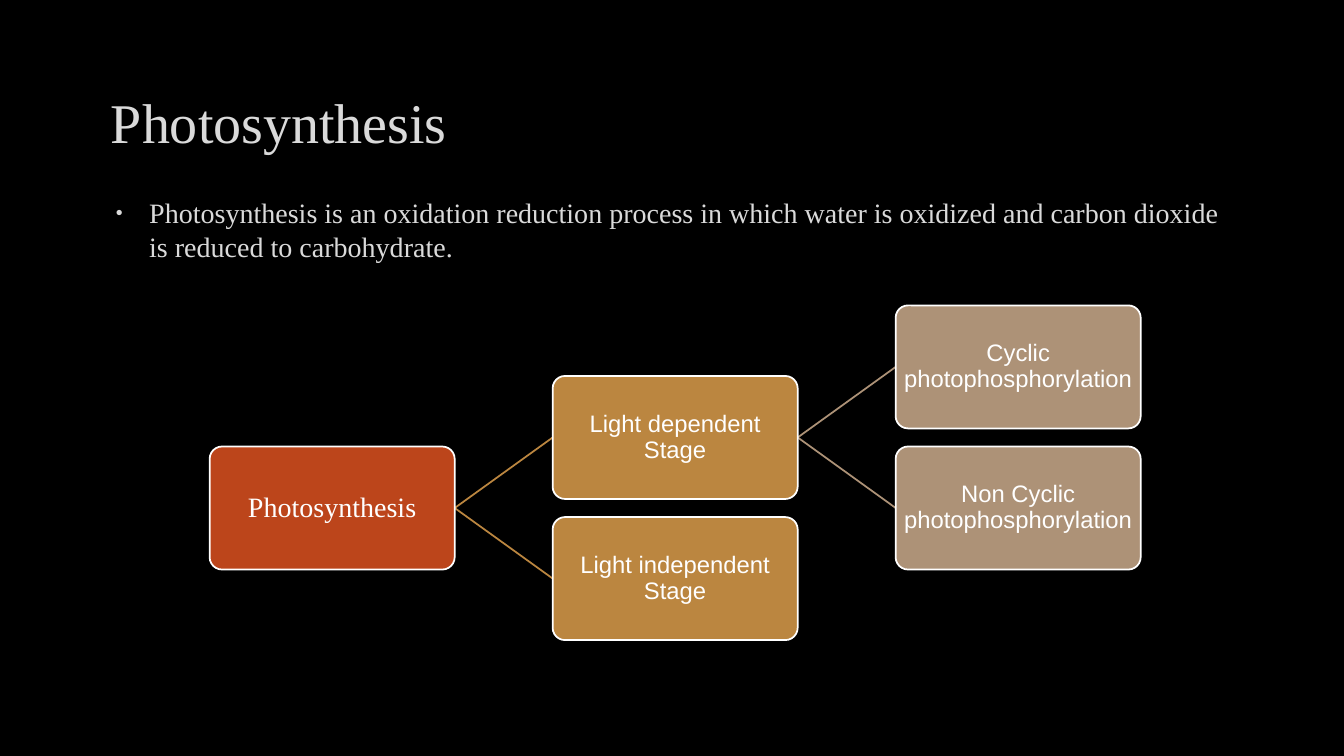
"""Build the Photosynthesis slide with its stage tree."""
from lxml.etree import SubElement
from pptx import Presentation
from pptx.dml.color import RGBColor
from pptx.enum.shapes import MSO_CONNECTOR, MSO_SHAPE
from pptx.enum.text import MSO_ANCHOR, PP_ALIGN
from pptx.oxml.ns import qn
from pptx.util import Inches, Pt

TITLE = "Photosynthesis"
BODY = ("Photosynthesis is an oxidation reduction process in which water is "
        "oxidized and carbon dioxide is reduced to carbohydrate.")
SERIF, SANS = "Times New Roman", "Arial"
HEX = {"back": "000000", "text": "DADADA", "white": "FFFFFF",
       "root": "BC451B", "stage": "BB8640", "type": "AD9277"}
LEVELS = ["root", "stage", "type"]

# name: (label, column, row, parent)
NODES = {
    "all": ("Photosynthesis", 0, 2, None),
    "light": ("Light dependent Stage", 1, 1, "all"),
    "dark": ("Light independent Stage", 1, 3, "all"),
    "cyclic": ("Cyclic photophosphorylation", 2, 0, "light"),
    "non": ("Non Cyclic photophosphorylation", 2, 2, "light"),
}
LEFT, TOP = 2.08, 3.03
WIDE, HIGH = 2.43, 1.22
COL, ROW = WIDE * 1.4, 0.7


def tone(key):
    return RGBColor.from_string(HEX[key])


def style(para, face, size, key):
    para.font.name = face
    para.font.size = Pt(size)
    para.font.color.rgb = tone(key)


def place(shape, left, top, wide, high):
    shape.left, shape.top = Inches(left), Inches(top)
    shape.width, shape.height = Inches(wide), Inches(high)


def bullet(para):
    props = para._p.get_or_add_pPr()
    props.set("marL", str(Inches(0.38)))
    props.set("indent", str(Inches(-0.33)))
    color = SubElement(props, qn("a:buClr"))
    SubElement(color, qn("a:srgbClr"), val=HEX["text"])
    SubElement(props, qn("a:buSzPct"), val="70000")
    SubElement(props, qn("a:buFont"), typeface=SANS)
    SubElement(props, qn("a:buChar"), char="•")


def spot(name):
    _, col, row, _ = NODES[name]
    return LEFT + col * COL, TOP + row * ROW


def add_link(slide, start, end, key):
    (x1, y1), (x2, y2) = spot(start), spot(end)
    ends = (x1 + WIDE, y1 + HIGH / 2, x2, y2 + HIGH / 2)
    link = slide.shapes.add_connector(
        MSO_CONNECTOR.STRAIGHT, *[Inches(n) for n in ends])
    link.line.color.rgb = tone(key)
    link.line.width = Pt(1.25)
    SubElement(link._element.spPr, qn("a:effectLst"))


def add_node(slide, name):
    label, col, _, _ = NODES[name]
    box = slide.shapes.add_shape(
        MSO_SHAPE.ROUNDED_RECTANGLE,
        *[Inches(n) for n in (*spot(name), WIDE, HIGH)])
    box.adjustments[0] = 0.1
    box.shadow.inherit = False
    box.fill.solid()
    box.fill.fore_color.rgb = tone(LEVELS[col])
    box.line.color.rgb = tone("white")
    box.line.width = Pt(1.25)
    frame = box.text_frame
    frame.word_wrap = True
    frame.vertical_anchor = MSO_ANCHOR.MIDDLE
    frame.margin_left = frame.margin_right = Inches(0.01)
    frame.margin_top = frame.margin_bottom = Inches(0.01)
    para = frame.paragraphs[0]
    para.text = label
    para.alignment = PP_ALIGN.CENTER
    para.line_spacing = 0.9
    style(para, *((SANS, 17) if col else (SERIF, 20)), "white")


def main():
    deck = Presentation()
    deck.slide_width, deck.slide_height = Inches(13.33), Inches(7.5)
    slide = deck.slides.add_slide(deck.slide_layouts[1])
    slide.background.fill.solid()
    slide.background.fill.fore_color.rgb = tone("back")

    title, body = slide.placeholders
    place(title, 1, 0.67, 11.32, 1.06)
    title.text_frame.text = TITLE
    title.text_frame.vertical_anchor = MSO_ANCHOR.MIDDLE
    head = title.text_frame.paragraphs[0]
    head.alignment = PP_ALIGN.JUSTIFY
    style(head, SERIF, 40, "text")

    place(body, 1, 1.89, 11.32, 4.44)
    body.text_frame.text = BODY
    point = body.text_frame.paragraphs[0]
    bullet(point)
    point.space_before, point.space_after = Pt(0), Pt(6)
    style(point, SERIF, 20, "text")

    for name, (_, col, _, parent) in NODES.items():
        if parent:
            add_link(slide, parent, name, LEVELS[col])
    for name in NODES:
        add_node(slide, name)
    deck.save("out.pptx")


if __name__ == "__main__":
    main()
